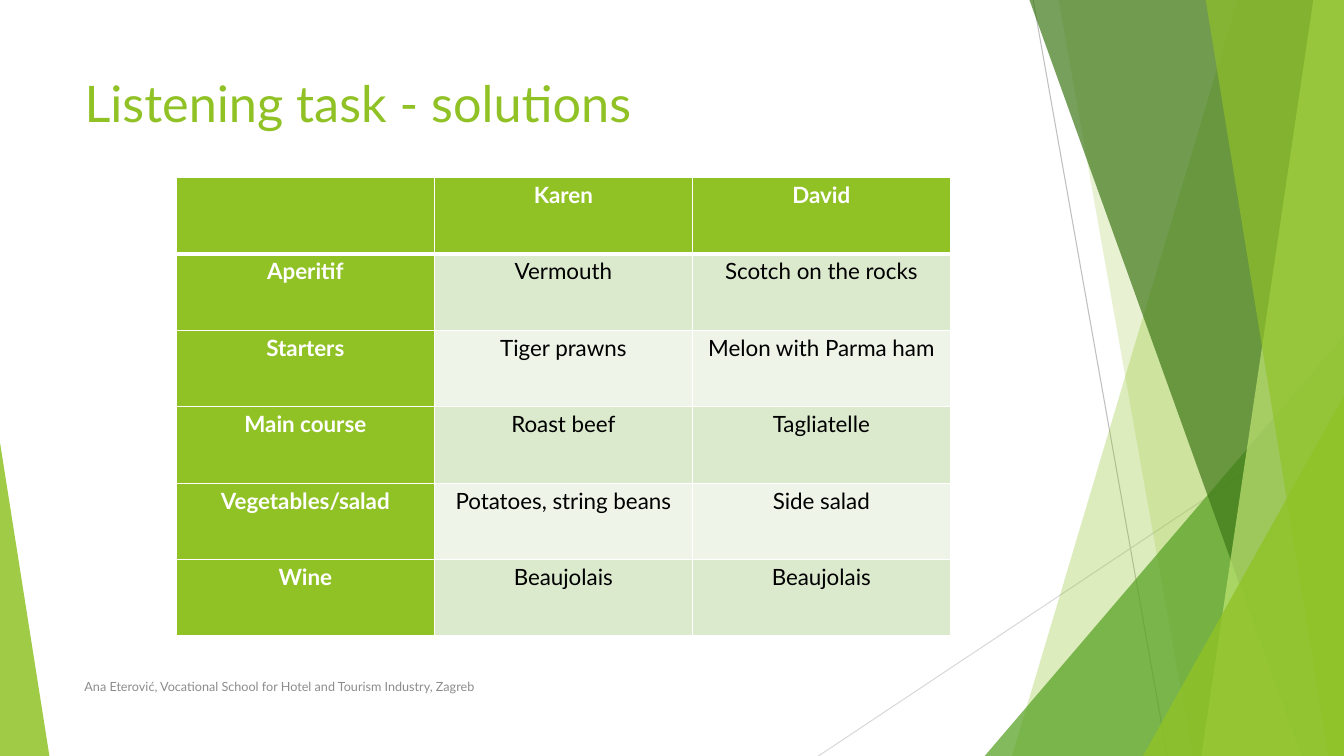
from lxml import etree
from pptx import Presentation
from pptx.dml.color import RGBColor
from pptx.enum import shapes, text
from pptx.oxml import ns
from pptx.util import Pt

GREEN = RGBColor(0x90, 0xC2, 0x26)
MID_GREEN = RGBColor(0x54, 0xA0, 0x21)
DARK_GREEN = RGBColor(0x3F, 0x78, 0x19)
LIGHT_GREEN = RGBColor(0xC0, 0xE4, 0x74)
BAND_DARK = RGBColor(0xDB, 0xE9, 0xCD)
BAND_LIGHT = RGBColor(0xEE, 0xF4, 0xE8)
SILVER = RGBColor(0xBF, 0xBF, 0xBF)
PALE_GREY = RGBColor(0xD9, 0xD9, 0xD9)
FOOTER_GREY = RGBColor(0x8C, 0x8C, 0x8C)
WHITE = RGBColor(0xFF, 0xFF, 0xFF)
BLACK = RGBColor(0, 0, 0)
FONT = "Lato"
WIDTH, HEIGHT = 960, 540

# Ribbons: left edge x at top and bottom. Triangles: left, top, width, apex.
FACETS = [
    ("ribbon", (884.2, 722.9), GREEN, 30),
    ("ribbon", (756, 851.8), GREEN, 20),
    ("triangle", (703.4, 239.8, 256.6, 1), MID_GREEN, 72),
    ("ribbon", (735.1, 929.5), DARK_GREEN, 70),
    ("ribbon", (938.2, 858.2), LIGHT_GREEN, 70),
    ("ribbon", (861.1, 949), GREEN, 65),
    ("triangle", (816.5, 283, 143.5, 1), GREEN, 80),
    ("triangle", (0, 316.1, 35.3, 0), GREEN, 85),
]
MENU = [
    ("", "Karen", "David"),
    ("Aperitif", "Vermouth", "Scotch on the rocks"),
    ("Starters", "Tiger prawns", "Melon with Parma ham"),
    ("Main course", "Roast beef", "Tagliatelle"),
    ("Vegetables/salad", "Potatoes, string beans", "Side salad"),
    ("Wine", "Beaujolais", "Beaujolais"),
]


def style_run(p, size, color, bold=False):
    for r in p.runs:
        r.font.name = FONT
        r.font.size = Pt(size)
        r.font.bold = bold
        r.font.color.rgb = color


def add_border(cell, side, width):
    """Add a white border; side is L, R, T or B, added before the fill."""
    ln = etree.SubElement(cell._tc.get_or_add_tcPr(), ns.qn("a:ln" + side), w=str(Pt(width)))
    fill = etree.SubElement(ln, ns.qn("a:solidFill"))
    etree.SubElement(fill, ns.qn("a:srgbClr"), val=str(WHITE))


prs = Presentation()
prs.slide_width, prs.slide_height = Pt(WIDTH), Pt(HEIGHT)
s = prs.slides.add_slide(prs.slide_layouts[6])

# Background lines and facets
for x1, y1, x2, y2, color in [(738, 0, 833.8, HEIGHT, SILVER), (WIDTH, 290.2, 584.6, HEIGHT, PALE_GREY)]:
    line = s.shapes.add_connector(shapes.MSO_CONNECTOR.STRAIGHT, Pt(x1), Pt(y1), Pt(x2), Pt(y2))
    line.line.color.rgb = color
    line.line.width = Pt(0.75)
    etree.SubElement(line._element.spPr, ns.qn("a:effectLst"))

for kind, geometry, color, opacity in FACETS:
    if kind == "ribbon":
        top_x, bottom_x = geometry
        outline = s.shapes.build_freeform(Pt(top_x), Pt(-0.7))
        corners = [(WIDTH, -0.7), (WIDTH, HEIGHT), (bottom_x, HEIGHT)]
        outline.add_line_segments([(Pt(x), Pt(y)) for x, y in corners], close=True)
        sp = outline.convert_to_shape()
    else:
        left, top, width, apex = geometry
        sp = s.shapes.add_shape(shapes.MSO_SHAPE.ISOSCELES_TRIANGLE,
                                Pt(left), Pt(top), Pt(width), Pt(HEIGHT - top))
        sp.adjustments[0] = apex
    sp.shadow.inherit = False
    sp.fill.solid()
    sp.fill.fore_color.rgb = color
    srgb = sp._element.spPr.find(".//" + ns.qn("a:srgbClr"))
    etree.SubElement(srgb, ns.qn("a:alpha"), val=str(opacity * 1000))
    sp.line.fill.background()

# Menu table
table = s.shapes.add_table(len(MENU), 3, Pt(126), Pt(126.7), Pt(553), Pt(327.6)).table
table.first_row = table.horz_banding = False
for column in table.columns:
    column.width = Pt(184.3)
for i, entries in enumerate(MENU):
    table.rows[i].height = Pt(54.6)
    for j, entry in enumerate(entries):
        cell = table.cell(i, j)
        heading = i == 0 or j == 0
        for side in "LRTB":
            under_header = (i, side) in [(0, "B"), (1, "T")]
            add_border(cell, side, 3 if under_header else 1)
        cell.fill.solid()
        cell.fill.fore_color.rgb = GREEN if heading else BAND_DARK if i % 2 else BAND_LIGHT
        cell.margin_left = cell.margin_right = Pt(5)
        cell.margin_top = cell.margin_bottom = 0
        p = cell.text_frame.paragraphs[0]
        p.text = entry
        p.alignment = text.PP_ALIGN.CENTER
        p.line_spacing = 1.15
        p.space_after = Pt(10)
        style_run(p, 16, WHITE if heading else BLACK, heading)

# Title and footer
for words, top, width, height, size, color, anchor in [
    ("Listening task - solutions", 48, 677, 104, 36, GREEN, text.MSO_ANCHOR.TOP),
    ("Ana Eterović, Vocational School for Hotel and Tourism Industry, Zagreb",
     476, 496, 29, 9, FOOTER_GREY, text.MSO_ANCHOR.MIDDLE),
]:
    tf = s.shapes.add_textbox(Pt(53.3), Pt(top), Pt(width), Pt(height)).text_frame
    tf.word_wrap = True
    tf.vertical_anchor = anchor
    tf.text = words
    style_run(tf.paragraphs[0], size, color)

prs.save("out.pptx")
